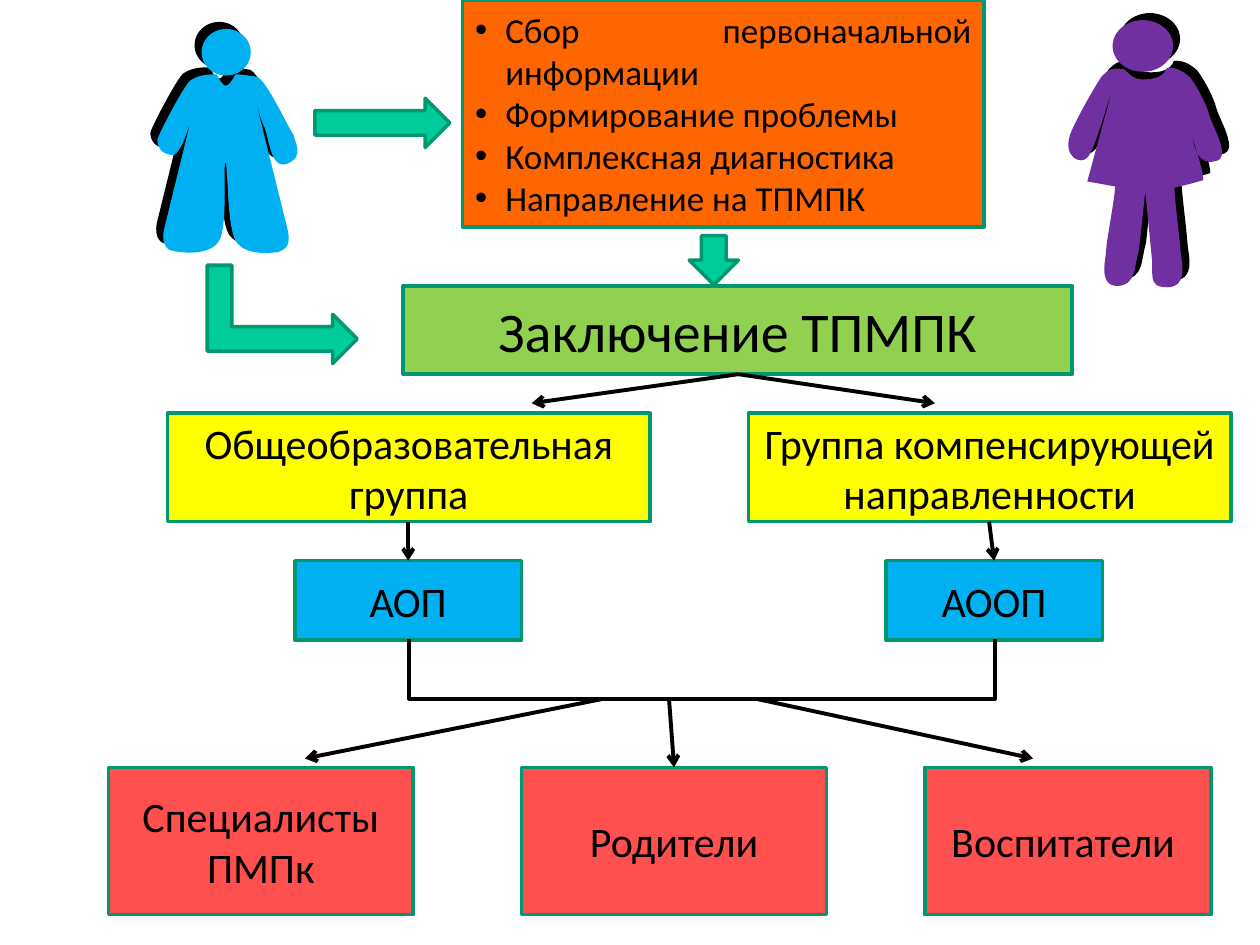
from lxml.etree import SubElement
from pptx import Presentation
from pptx.dml.color import RGBColor
from pptx.enum.shapes import MSO_CONNECTOR, MSO_SHAPE
from pptx.enum.text import MSO_ANCHOR, MSO_AUTO_SIZE, PP_ALIGN
from pptx.oxml.ns import qn
from pptx.util import Inches, Pt

THEME = {
    "font": "Calibri", "list": 20, "label": 24, "title": 32,
    "text": "000000", "border": "009771", "wire": "000000", "arrow": "00CC99",
    "collect": "FF6600", "verdict": "92D050", "group": "FFFF00",
    "program": "00B0F0", "people": "FF5050",
    "child": "00B0F0", "adult": "7030A0",
}
FRAME = {"word_wrap": True, "auto_size": MSO_AUTO_SIZE.NONE,
         "vertical_anchor": MSO_ANCHOR.MIDDLE}


def paint(sp, color, border=True):
    sp.shadow.inherit = False
    sp.fill.solid()
    sp.fill.fore_color.rgb = RGBColor.from_string(THEME[color])
    if border:
        sp.line.color.rgb = RGBColor.from_string(THEME["border"])
        sp.line.width = Pt(2)
    else:
        sp.line.fill.background()


def write(sp, lines, size, align=PP_ALIGN.CENTER, bullet=False):
    tf = sp.text_frame
    for name, value in FRAME.items():
        setattr(tf, name, value)
    for i, line in enumerate(lines):
        p = tf.add_paragraph() if i else tf.paragraphs[0]
        for name, value in {"alignment": align, "space_before": Pt(0)}.items():
            setattr(p, name, value)
        if bullet:
            pPr = p._p.get_or_add_pPr()
            pPr.set("marL", str(Inches(0.24)))
            pPr.set("indent", str(-Inches(0.24)))
            SubElement(pPr, qn("a:buFont")).set("typeface", "Arial")
            SubElement(pPr, qn("a:buChar")).set("char", "•")
        r = p.add_run()
        r.text = line
        for name, value in {"name": THEME["font"], "size": Pt(THEME[size]), "bold": False}.items():
            setattr(r.font, name, value)
        r.font.color.rgb = RGBColor.from_string(THEME["text"])


prs = Presentation()
prs.slide_width, prs.slide_height = Inches(10), Inches(7.5)
s = prs.slides.add_slide(prs.slide_layouts[1])

placeholders = [
    (s.placeholders[1], (3.67, 0, 4.14, 1.8), "collect"),
    (s.shapes.title, (3.2, 2.27, 5.31, 0.7), "verdict"),
]
for sp, box, color in placeholders:
    for name, value in zip(("left", "top", "width", "height"), box):
        setattr(sp, name, Inches(value))
    paint(sp, color)
write(s.placeholders[1], ["Сбор первоначальной информации", "Формирование проблемы",
                          "Комплексная диагностика", "Направление на ТПМПК"],
      "list", PP_ALIGN.JUSTIFY, True)
write(s.shapes.title, ["Заключение ТПМПК"], "title")

boxes = [
    ("Общеобразовательная группа", 1.33, 3.28, 3.83, 0.86, "group"),
    ("Группа компенсирующей направленности", 5.94, 3.28, 3.83, 0.86, "group"),
    ("АОП", 2.34, 4.45, 1.8, 0.63, "program"),
    ("АООП", 7.03, 4.45, 1.72, 0.63, "program"),
    ("Специалисты ПМПк", 0.86, 6.09, 2.42, 1.17, "people"),
    ("Родители", 4.14, 6.09, 2.42, 1.17, "people"),
    ("Воспитатели ", 7.34, 6.09, 2.27, 1.17, "people"),
]
for text, x, y, w, h, color in boxes:
    sp = s.shapes.add_shape(MSO_SHAPE.RECTANGLE, Inches(x), Inches(y), Inches(w), Inches(h))
    paint(sp, color)
    write(sp, [text], "label")

block_arrows = [
    (MSO_SHAPE.DOWN_ARROW, 5.47, 1.87, 0.39, 0.39, 0),
    (MSO_SHAPE.RIGHT_ARROW, 2.5, 0.78, 1.07, 0.39, 0),
    (MSO_SHAPE.BENT_UP_ARROW, 1.85, 1.9, 0.78, 1.19, 90),
]
for kind, x, y, w, h, turn in block_arrows:
    sp = s.shapes.add_shape(kind, Inches(x), Inches(y), Inches(w), Inches(h))
    sp.rotation = turn
    paint(sp, "arrow")

straight = [
    (5.86, 2.97, 7.42, 3.2), (5.86, 2.97, 4.22, 3.2),
    (3.24, 4.14, 3.24, 4.45), (7.85, 4.14, 7.89, 4.45),
    (5.31, 5.55, 5.35, 6.09), (4.77, 5.55, 2.42, 6.02), (6.02, 5.55, 8.2, 6.02),
]
bent = [
    (4.2, 4.12, 4.67, 6.5, 270, "1"),
    (6.45, 4.1, 6.92, 6.52, 90, "0"),
]
for x1, y1, x2, y2, *turn in straight + bent:
    kind = MSO_CONNECTOR.ELBOW if turn else MSO_CONNECTOR.STRAIGHT
    c = s.shapes.add_connector(kind, Inches(x1), Inches(y1), Inches(x2), Inches(y2))
    c.line.color.rgb = RGBColor.from_string(THEME["wire"])
    c.line.width = Pt(2.25)
    spPr = c._element.spPr
    if turn:
        spPr.find(qn("a:prstGeom")).set("prst", "bentConnector2")
        xfrm = spPr.find(qn("a:xfrm"))
        xfrm.set("rot", str(turn[0] * 60000))
        xfrm.set("flipH", turn[1])
    else:
        SubElement(spPr.find(qn("a:ln")), qn("a:tailEnd")).set("type", "arrow")
    SubElement(spPr, qn("a:effectLst"))

child_body = [
    (1.87, 0.59),
    (1.85, 0.63, 1.81, 0.69, 1.79, 0.68), (1.77, 0.68, 1.74, 0.63, 1.72, 0.59),
    (1.63, 0.59, 1.57, 0.6, 1.51, 0.64), (1.46, 0.68, 1.25, 1.08, 1.25, 1.11),
    (1.25, 1.14, 1.26, 1.23, 1.38, 1.23), (1.48, 1.18, 1.56, 0.76, 1.56, 0.76),
    (1.54, 0.86, 1.3, 1.83, 1.3, 1.83), (1.28, 1.95, 1.34, 1.99, 1.37, 1.99),
    (1.45, 2.01, 1.67, 2.03, 1.74, 1.91), (1.81, 1.8, 1.77, 1.29, 1.79, 1.29),
    (1.81, 1.29, 1.8, 1.79, 1.87, 1.91), (1.94, 2.03, 2.14, 2.01, 2.21, 2),
    (2.25, 1.98, 2.32, 1.97, 2.28, 1.81), (2.02, 0.76),
    (1.99, 0.62, 2.05, 0.9, 2.09, 0.99), (2.14, 1.08, 2.14, 1.35, 2.28, 1.3),
    (2.42, 1.24, 2.34, 1.13, 2.33, 1.07), (2.3, 1.04, 2.12, 0.64, 2.04, 0.61),
    (1.92, 0.59, 1.87, 0.59, 1.87, 0.59),
]
adult_body = [
    (9.08, 0.63),
    (9.18, 0.63, 9.24, 0.6, 9.26, 0.54), (9.32, 0.53, 9.39, 0.56, 9.45, 0.62),
    (9.5, 0.69, 9.57, 0.81, 9.6, 0.92), (9.63, 1.02, 9.78, 1.26, 9.64, 1.28),
    (9.52, 1.31, 9.48, 1.19, 9.46, 1.08), (9.41, 0.94, 9.34, 0.74, 9.34, 0.74),
    (9.36, 0.8, 9.55, 1.3, 9.55, 1.43), (9.41, 1.47, 9.44, 1.46, 9.32, 1.49),
    (9.33, 1.65, 9.36, 1.86, 9.37, 2), (9.38, 2.09, 9.43, 2.27, 9.27, 2.28),
    (9.1, 2.28, 9.16, 2.18, 9.14, 2.03), (9.09, 1.52), (9.04, 1.98),
    (9, 2.12, 9.02, 2.26, 8.87, 2.27), (8.71, 2.27, 8.78, 2.05, 8.78, 1.98),
    (8.78, 1.92, 8.85, 1.57, 8.85, 1.48), (8.74, 1.46, 8.63, 1.44, 8.63, 1.44),
    (8.82, 0.74), (8.82, 0.71, 8.69, 1.2, 8.63, 1.25),
    (8.58, 1.31, 8.44, 1.25, 8.49, 1.08), (8.51, 1, 8.72, 0.63, 8.75, 0.6),
    (8.79, 0.57, 8.8, 0.53, 8.92, 0.55), (8.98, 0.6, 8.99, 0.63, 9.08, 0.63),
]
figures = [
    (child_body, (1.6, 0.23, 0.39, 0.37), "child", 225),
    (adult_body, (8.83, 0.16, 0.48, 0.41), "adult", 315),
]
for outline, head_box, color, angle in figures:
    points = [(Inches(x), Inches(y)) for segment in outline
              for x, y in zip(segment[::2], segment[1::2])]
    figure = s.shapes.add_group_shape().shapes
    builder = figure.build_freeform(*points[0])
    builder.add_line_segments(points[1:])
    body = builder.convert_to_shape()
    lines = iter(list(body._element.iter(qn("a:lnTo"))))
    for segment in outline[1:]:
        curve = next(lines)
        if len(segment) == 6:
            curve.tag = qn("a:cubicBezTo")
            for control in (next(lines), next(lines)):
                curve.append(control[0])
                control.getparent().remove(control)
    head = figure.add_shape(MSO_SHAPE.OVAL, *map(Inches, head_box))
    for sp in (body, head):
        paint(sp, color, False)
        effects = sp._element.spPr.find(qn("a:effectLst"))
        shadow = SubElement(effects, qn("a:outerShdw"), dist=str(Pt(5.7)),
                            dir=str(angle * 60000), algn="ctr", rotWithShape="0")
        SubElement(shadow, qn("a:srgbClr")).set("val", THEME["text"])

prs.save("out.pptx")
